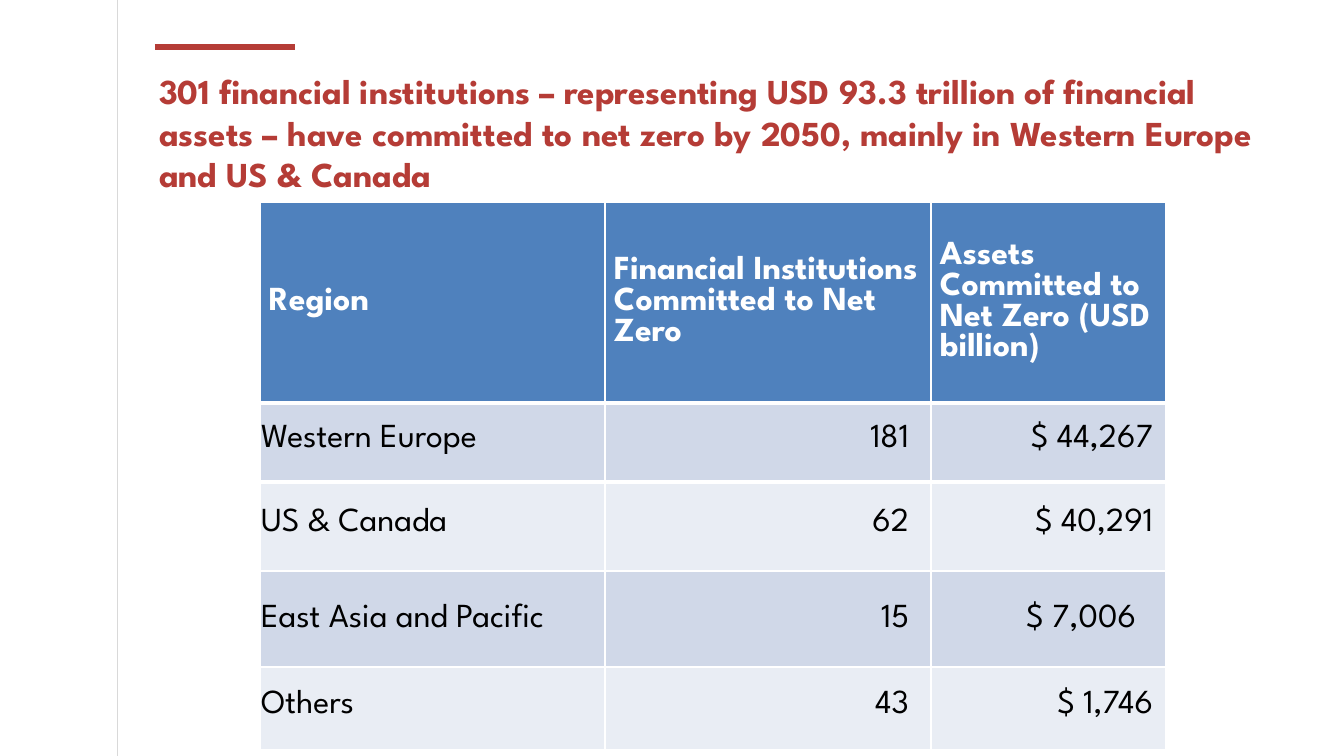
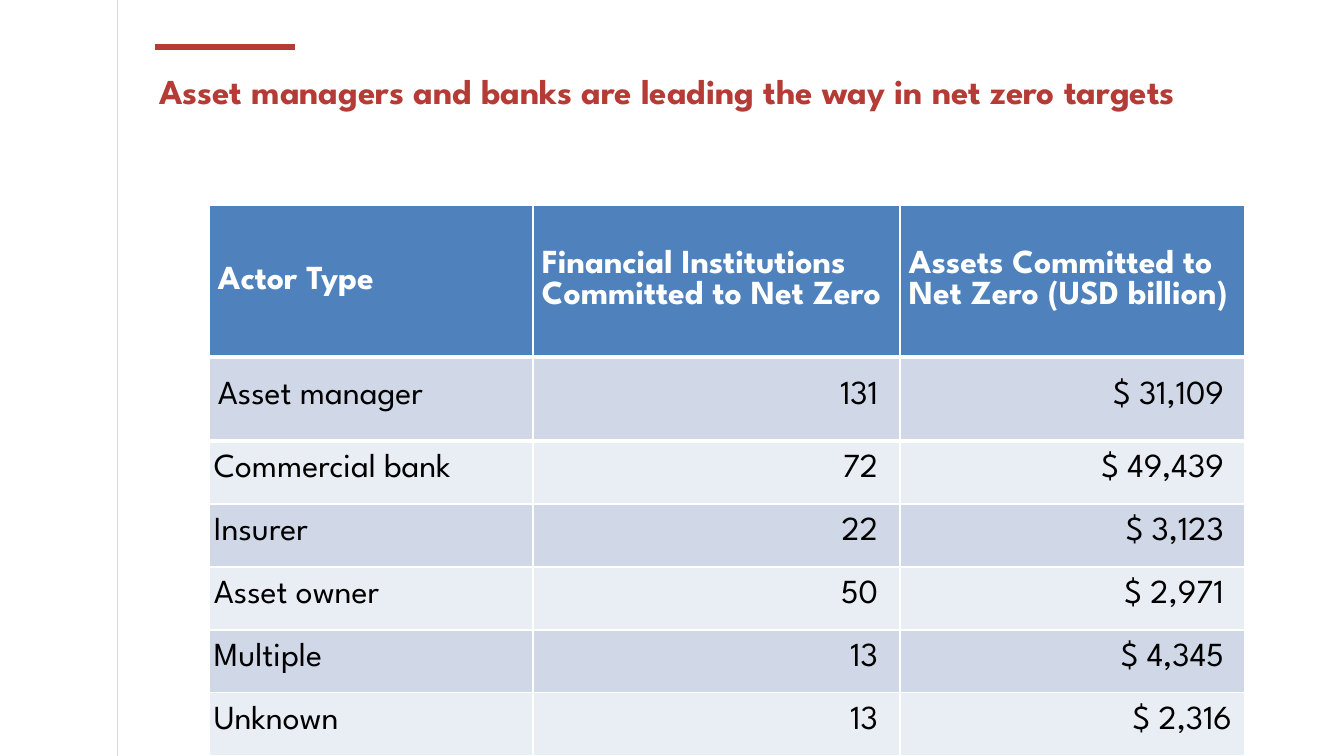
from dataclasses import dataclass

from lxml import etree
from pptx import Presentation
from pptx.dml.color import RGBColor
from pptx.enum.text import MSO_ANCHOR, PP_ALIGN
from pptx.oxml.ns import qn
from pptx.slide import Slide
from pptx.table import _Cell
from pptx.util import Emu, Pt

MIDDLE = MSO_ANCHOR.MIDDLE
TOP = MSO_ANCHOR.TOP
LEFT = PP_ALIGN.LEFT
RIGHT = PP_ALIGN.RIGHT

EMU_PER_PX = 914400 / 100.8
FONT = "League Spartan"
RED = "B53C36"
GREY = "D9D9D9"
WHITE = "FFFFFF"
BLACK = "000000"
HEADER_BLUE = "4F81BD"
BAND_FILLS = ("D0D8E8", "E9EDF4")
COUNT_GAP = 22
ROW_SPACING = 17.4
HEADER_RULE = 3


@dataclass(frozen=True)
class Rule:
    start: tuple[int, int]
    end: tuple[int, int]
    color: str
    weight: float


@dataclass(frozen=True)
class Row:
    label: str
    count: str
    amount: str
    height: int
    label_inset: int = 1
    amount_gap: int = 13
    spaced: bool = True


@dataclass(frozen=True)
class Page:
    title: str
    label_heading: str
    left: int
    top: int
    widths: tuple[int, int, int]
    header_height: int
    rows: tuple[Row, ...]


RULES = (
    Rule((155, 47), (295, 47), RED, 4.25),
    Rule((118, 0), (118, 756), GREY, 0.75),
)

PAGES = (
    Page(
        "301 financial institutions – representing USD 93.3 trillion of financial "
        "assets – have committed to net zero by 2050, mainly in Western Europe "
        "and US & Canada",
        "Region", 260, 202, (345, 326, 235), 201,
        (
            Row("Western Europe", "181", "$ 44,267", 79),
            Row("US & Canada", "62", "$ 40,291", 89),
            Row("East Asia and Pacific", "15", "$ 7,006", 96, amount_gap=30, spaced=False),
            Row("Others", "43", "$ 1,746", 83),
        ),
    ),
    Page(
        "Asset managers and banks are leading the way in net zero targets",
        "Actor Type", 209, 205, (324, 367, 345), 152,
        (
            Row("Asset manager", "131", "$ 31,109", 84, 9, 21),
            Row("Commercial bank", "72", "$ 49,439", 63, 5, 21),
            Row("Insurer", "22", "$ 3,123", 63, 5, 21),
            Row("Asset owner", "50", "$ 2,971", 63, 5, 21),
            Row("Multiple", "13", "$ 4,345", 63, 5, 21),
            Row("Unknown", "13", "$ 2,316", 63, 5, 13),
        ),
    ),
)


def px(length: int) -> Emu:
    return Emu(round(length * EMU_PER_PX))


def rgb(value: str) -> RGBColor:
    return RGBColor.from_string(value)


def format_text(frame, size: int, color: str, bold: bool, align=LEFT) -> None:
    for para in frame.paragraphs:
        para.alignment = align
        for span in para.runs:
            span.font.name = FONT
            span.font.size = Pt(size)
            span.font.bold = bold
            span.font.color.rgb = rgb(color)


def draw_rule(slide: Slide, rule: Rule) -> None:
    line = slide.shapes.add_connector(1, *map(px, rule.start + rule.end))
    line.line.color.rgb = rgb(rule.color)
    line.line.width = Pt(rule.weight)
    etree.SubElement(line.element.spPr, qn("a:effectLst"))


def draw_title(slide: Slide, text: str) -> None:
    title = slide.shapes.title
    title.left, title.top, title.width, title.height = map(px, (155, 61, 1116, 124))
    frame = title.text_frame
    frame.text = text
    frame.word_wrap = True
    frame.vertical_anchor = TOP
    frame.margin_left, frame.margin_top = px(4), px(8)
    frame.margin_right, frame.margin_bottom = px(10), px(5)
    format_text(frame, 25, RED, True)


def fill_cell(cell: _Cell, text: str, fill: str, color: str, bold: bool,
              insets: tuple[int, int, int, int], align=LEFT) -> None:
    cell.fill.solid()
    cell.fill.fore_color.rgb = rgb(fill)
    cell.vertical_anchor = MIDDLE
    (cell.margin_left, cell.margin_top,
     cell.margin_right, cell.margin_bottom) = map(px, insets)
    cell.text_frame.text = text
    format_text(cell.text_frame, 24, color, bold, align)


def set_border(cell: _Cell, side: str, color: str, weight: float) -> None:
    border = etree.Element(qn(side), w=str(Pt(weight)))
    paint = etree.SubElement(border, qn("a:solidFill"))
    etree.SubElement(paint, qn("a:srgbClr"), val=color)
    cell._tc.get_or_add_tcPr().insert(0, border)


def draw_table(slide: Slide, page: Page) -> None:
    heights = (page.header_height, *(row.height for row in page.rows))
    table = slide.shapes.add_table(
        len(heights), len(page.widths), px(page.left), px(page.top),
        px(sum(page.widths)), px(sum(heights)),
    ).table
    for column, width in zip(table.columns, page.widths):
        column.width = px(width)
    for line, height in zip(table.rows, heights):
        line.height = px(height)
    headings = (
        page.label_heading,
        "Financial Institutions Committed to Net Zero",
        "Assets Committed to Net Zero (USD billion)",
    )
    for index, heading in enumerate(headings):
        fill_cell(table.cell(0, index), heading, HEADER_BLUE, WHITE, True, (9, 4, 9, 4))
        set_border(table.cell(0, index), "a:lnB", WHITE, HEADER_RULE)
        set_border(table.cell(1, index), "a:lnT", WHITE, HEADER_RULE)
    for number, row in enumerate(page.rows):
        fill = BAND_FILLS[number % 2]
        entries = (
            (row.label, row.label_inset, 1, LEFT),
            (row.count, 1, COUNT_GAP, RIGHT),
            (row.amount, 1, row.amount_gap, RIGHT),
        )
        for index, (text, left, right, align) in enumerate(entries):
            cell = table.cell(number + 1, index)
            fill_cell(cell, text, fill, BLACK, False, (left, 1, right, 0), align)
            if row.spaced:
                para = cell.text_frame.paragraphs[0]
                para.line_spacing = Pt(ROW_SPACING)
                para.space_after = Pt(ROW_SPACING)


def main() -> None:
    deck = Presentation()
    deck.slide_width, deck.slide_height = px(1344), px(756)
    for page in PAGES:
        slide = deck.slides.add_slide(deck.slide_layouts[5])
        for rule in RULES:
            draw_rule(slide, rule)
        draw_title(slide, page.title)
        draw_table(slide, page)
    deck.save("out.pptx")


if __name__ == "__main__":
    main()
